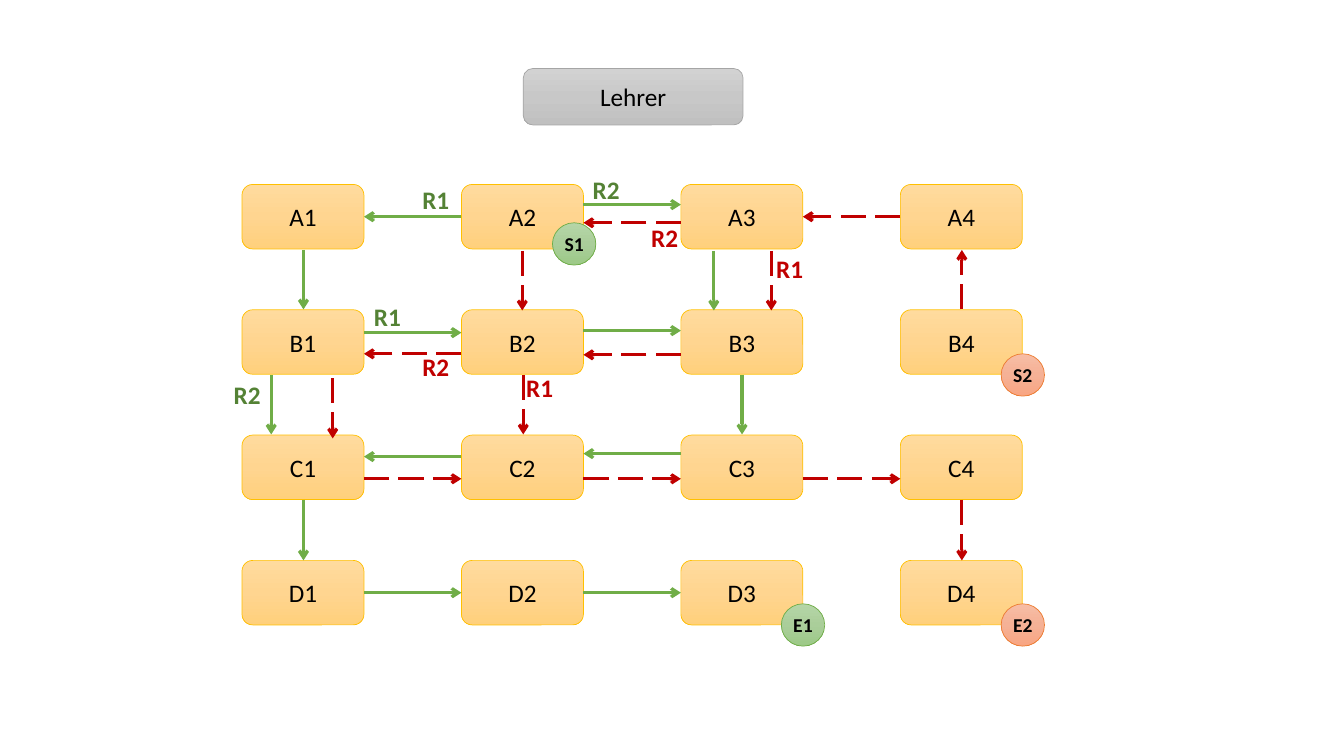
from copy import deepcopy

from lxml.etree import SubElement as Sub
from pptx import Presentation
from pptx.dml.color import RGBColor
from pptx.enum.dml import MSO_LINE as Dash
from pptx.enum.shapes import MSO_CONNECTOR as Conn, MSO_SHAPE as Kind
from pptx.enum.text import MSO_ANCHOR as Anchor, MSO_AUTO_SIZE as Auto, PP_ALIGN as Align
from pptx.oxml.ns import qn
from pptx.util import Inches, Pt

SEAT = ("FFDB9E", "FFD590", "FFD07C", "FFC000")
DESK = ("D2D2D2", "C8C8C8", "C0C0C0", "A5A5A5")
LEAF = ("B5D5A7", "AACE9A", "9CC987", "70AD47")
ROSE = ("F7BDA5", "F5B196", "F8A582", "ED7D31")
GREEN, RED, MOSS = "70AD47", "C00000", "548235"

LEFT, TOP, WIDE, HIGH = 2.4, 1.83, 1.21, 0.64
STEP, DROP = 6.53 / 3, 3.73 / 3


def paint(hue):
    return RGBColor.from_string(hue)


def apply(item, form):
    for name, value in form.items():
        setattr(item, name, value)


class Board:
    def __init__(self, slide):
        self.shapes = slide.shapes
        self.font = {"name": "Calibri", "size": Pt(18), "bold": False}

    def letter(self, shape, text, hue, align, form, **font):
        frame = shape.text_frame
        apply(frame, form)
        par = frame.paragraphs[0]
        par.alignment = align
        run = par.add_run()
        run.text = text
        apply(run.font, {**self.font, **font})
        run.font.color.rgb = paint(hue)

    def block(self, kind, area, tones, text, form, **font):
        shape = self.shapes.add_shape(kind, *map(Inches, area))
        shape.shadow.inherit = False
        shape.fill.gradient()
        shape.fill.gradient_angle = 270
        stops = shape._element.spPr.find(".//" + qn("a:gsLst"))
        stops.insert(1, deepcopy(stops[0]))
        for stop, spot, hue in zip(shape.fill.gradient_stops, (0, 0.5, 1), tones):
            stop.position = spot
            stop.color.rgb = paint(hue)
        shape.line.color.rgb = paint(tones[3])
        shape.line.width = Pt(0.5)
        form = {"vertical_anchor": Anchor.MIDDLE, "word_wrap": True, **form}
        self.letter(shape, text, "000000", Align.CENTER, form, **font)

    def box(self, area, tones, text):
        self.block(Kind.ROUNDED_RECTANGLE, area, tones, text, {})

    def dot(self, x, y, tones, text):
        pad = {f"margin_{side}": Inches(0.04) for side in ("left", "top", "right", "bottom")}
        self.block(Kind.OVAL, (x, y, 0.43, 0.42), tones, text, pad, size=Pt(14), bold=True)

    def arrow(self, start, end, hue):
        line = self.shapes.add_connector(Conn.STRAIGHT, *map(Inches, (*start, *end)))
        line.line.color.rgb = paint(hue)
        line.line.width = Pt(2.25)
        if hue == RED:
            line.line.dash_style = Dash.LONG_DASH
        props = line._element.spPr
        Sub(props.find(qn("a:ln")), qn("a:tailEnd"), type="arrow")
        Sub(props, qn("a:effectLst"))

    def label(self, x, y, hue, text):
        shape = self.shapes.add_textbox(*map(Inches, (x, y, 0.47, 0.4)))
        form = {"word_wrap": False, "auto_size": Auto.SHAPE_TO_FIT_TEXT}
        self.letter(shape, text, hue, Align.LEFT, form, bold=True)


def main():
    deck = Presentation()
    deck.slide_width, deck.slide_height = Inches(13.33), Inches(7.5)
    board = Board(deck.slides.add_slide(deck.slide_layouts[6]))

    board.box((5.19, 0.68, 2.18, 0.56), DESK, "Lehrer")
    for row, name in enumerate("ABCD"):
        for col in range(4):
            area = (LEFT + col * STEP, TOP + row * DROP, WIDE, HIGH)
            board.box(area, SEAT, f"{name}{col + 1}")

    for x, y, tones, text in (
        (5.48, 2.21, LEAF, "S1"), (7.75, 5.99, LEAF, "E1"),
        (9.93, 3.51, ROSE, "S2"), (9.93, 5.99, ROSE, "E2"),
    ):
        board.dot(x, y, tones, text)

    for gap, y, way, hue in (
        (0, 2.15, "left", GREEN), (1, 2.03, "right", GREEN),
        (1, 2.21, "left", RED), (2, 2.15, "left", RED),
        (0, 3.3, "right", GREEN), (0, 3.51, "left", RED),
        (1, 3.28, "right", GREEN), (1, 3.52, "left", RED),
        (0, 4.53, "left", GREEN), (0, 4.75, "right", RED),
        (1, 4.5, "left", GREEN), (1, 4.75, "right", RED),
        (2, 4.75, "right", RED),
        (0, 5.88, "right", GREEN), (1, 5.88, "right", GREEN),
    ):
        x = LEFT + WIDE + gap * STEP
        ends = [(x, y), (x + STEP - WIDE, y)]
        if way == "left":
            ends.reverse()
        board.arrow(*ends, hue)

    for x, y, rise, hue in (
        (3.01, 2.48, 0.59, GREEN), (5.18, 2.49, 0.59, RED),
        (7.08, 2.49, 0.59, GREEN), (7.65, 2.49, 0.59, RED),
        (9.54, 3.07, -0.59, RED),
        (2.69, 3.72, 0.59, GREEN), (3.3, 3.75, 0.6, RED),
        (5.19, 3.72, 0.59, RED), (7.36, 3.72, 0.59, GREEN),
        (3.01, 4.96, 0.6, GREEN), (9.54, 4.96, 0.6, RED),
    ):
        board.arrow((x, y), (x, y + rise), hue)

    for x, y, hue, text in (
        (4.09, 1.78, MOSS, "R1"), (5.78, 1.68, MOSS, "R2"),
        (7.6, 2.46, RED, "R1"), (6.36, 2.16, RED, "R2"),
        (3.61, 2.94, MOSS, "R1"), (2.22, 3.71, MOSS, "R2"),
        (5.12, 3.64, RED, "R1"), (4.09, 3.44, RED, "R2"),
    ):
        board.label(x, y, hue, text)

    deck.save("out.pptx")


if __name__ == "__main__":
    main()
